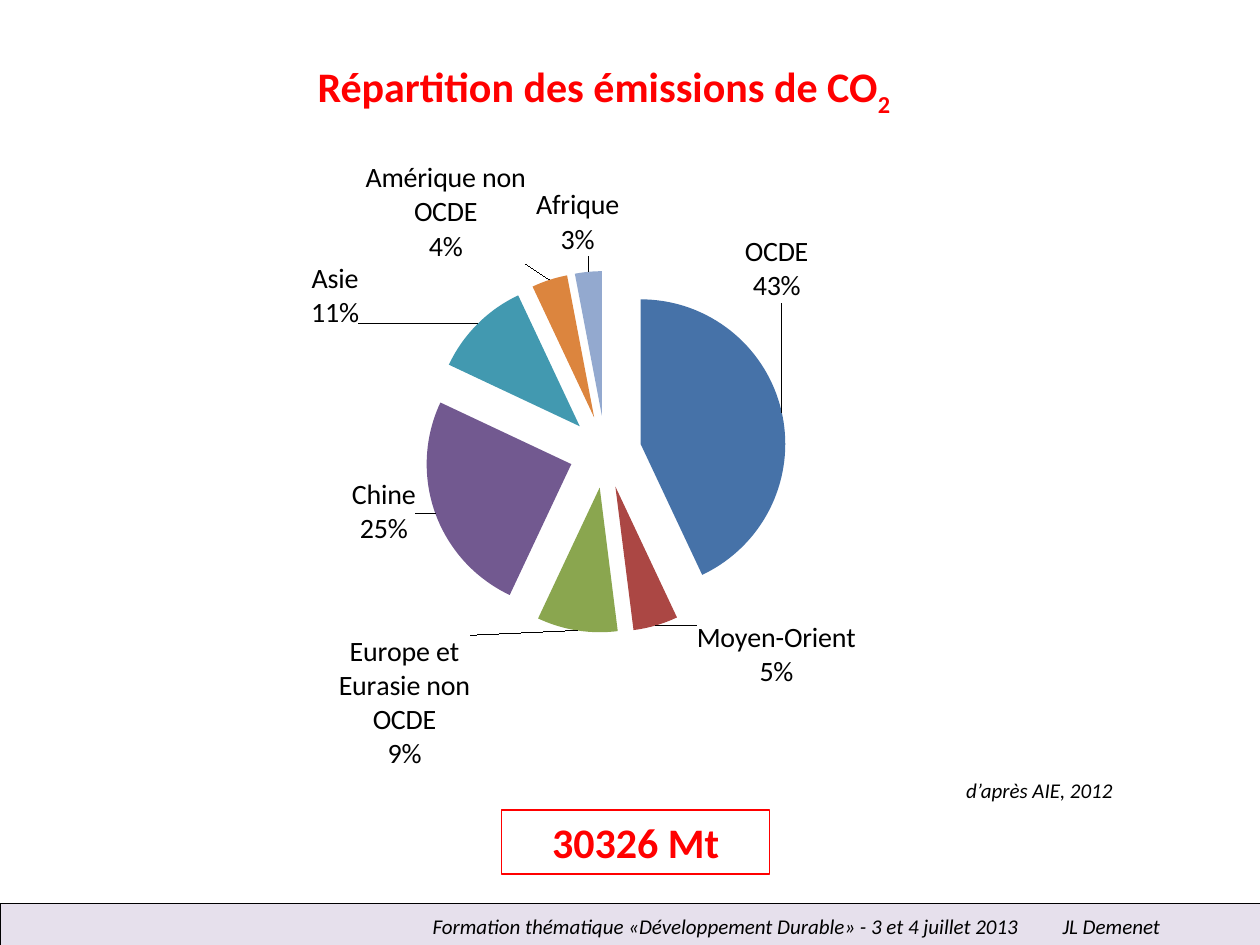
from lxml import etree
from pptx import Presentation, util as u
from pptx.chart.data import CategoryChartData
from pptx.dml.color import RGBColor
from pptx.enum import chart as charts, shapes, text

RED = RGBColor(0xFF, 0x00, 0x00)
BLACK = RGBColor(0x00, 0x00, 0x00)
LAVENDER = RGBColor(0xE6, 0xE0, 0xEC)
FONT = "Calibri"
C = "http://schemas.openxmlformats.org/drawingml/2006/chart"

# Region, share in %, slice colour, label shift in inches from its default place
REGIONS = [
    ("OCDE", 43, RGBColor(0x46, 0x72, 0xA8), (-0.35, -0.85)),
    ("Moyen-Orient", 5, RGBColor(0xAB, 0x47, 0x44), (0.31, -0.09)),
    ("Europe et Eurasie non OCDE", 9, RGBColor(0x8A, 0xA6, 0x4F), (-0.84, -0.02)),
    ("Chine", 25, RGBColor(0x72, 0x59, 0x90), (-0.1, -0.3)),
    ("Asie", 11, RGBColor(0x42, 0x99, 0xB0), (-0.9, 0.09)),
    ("Amérique non OCDE", 4, RGBColor(0xDC, 0x85, 0x3E), (-0.17, -0.07)),
    ("Afrique", 3, RGBColor(0x93, 0xA9, 0xCF), (0.25, -0.06)),
]

presentation = Presentation()
presentation.slide_width, presentation.slide_height = u.Inches(10), u.Inches(7.5)
WIDTH, HEIGHT = presentation.slide_width, presentation.slide_height
slide = presentation.slides.add_slide(presentation.slide_layouts[5])


def share(left, top, width, height):
    """Turn percentages of the slide into a position and a size."""
    return [int(WIDTH * left / 100), int(HEIGHT * top / 100),
            int(WIDTH * width / 100), int(HEIGHT * height / 100)]


def write(shape, words, size, color, align, bold=False, italic=False):
    """Fill the shape with one formatted paragraph."""
    frame = shape.text_frame
    frame.word_wrap = True
    frame.vertical_anchor = text.MSO_ANCHOR.MIDDLE
    paragraph = frame.paragraphs[0]
    paragraph.text = words
    paragraph.alignment = align
    font = paragraph.font
    font.name, font.size, font.color.rgb = FONT, u.Pt(size), color
    font.bold, font.italic = bold, italic
    return paragraph


# Title
title = slide.shapes.title
title.left, title.top, title.width, title.height = share(24.2, 4.8, 49.6, 9.33)
heading = write(title, "Répartition des émissions de CO", 24, RED,
                text.PP_ALIGN.LEFT, bold=True)
subscript = heading.add_run()
subscript.text = "2"
subscript.font._element.set("baseline", "-25000")

# Exploded pie
data = CategoryChartData()
data.categories = [region[0] for region in REGIONS]
data.add_series("Series 1", [region[1] for region in REGIONS])
frame = slide.shapes.add_chart(charts.XL_CHART_TYPE.PIE,
                               *share(11.2, 16.13, 73.7, 67.87), data)
chart = frame.chart
chart.has_legend = chart.has_title = False
chart.font.name, chart.font.size, chart.font.color.rgb = FONT, u.Pt(10), BLACK
plot = chart.plots[0]
plot.vary_by_categories = True
series = plot.series[0]
for index, (_, _, color, _) in enumerate(REGIONS):
    fill = series.points[index].format.fill
    fill.solid()
    fill.fore_color.rgb = color
explosion = etree.Element(f"{{{C}}}explosion", val="25")
series._element.find(f"{{{C}}}dPt").addprevious(explosion)

# Place of the pie inside the chart
area = chart._chartSpace.find(f".//{{{C}}}plotArea")
for old in area.findall(f"{{{C}}}layout"):
    area.remove(old)
area.insert(0, etree.fromstring(
    f'<c:layout xmlns:c="{C}"><c:manualLayout><c:layoutTarget val="inner"/>'
    '<c:xMode val="edge"/><c:yMode val="edge"/><c:x val="0.305"/><c:y val="0.185"/>'
    '<c:w val="0.39"/><c:h val="0.564"/></c:manualLayout></c:layout>'))

# Labels with name and percentage, moved away from the slices
SHOW = ('<c:dLblPos val="outEnd"/><c:showLegendKey val="0"/><c:showVal val="0"/>'
        '<c:showCatName val="1"/><c:showSerName val="0"/><c:showPercent val="1"/>'
        '<c:showBubbleSize val="0"/><c:separator>\n</c:separator>')
STYLE = ('<c:numFmt formatCode="0%" sourceLinked="0"/><c:spPr><a:noFill/></c:spPr>'
         '<c:txPr><a:bodyPr/><a:p><a:pPr><a:defRPr sz="1600">'
         f'<a:solidFill><a:srgbClr val="{BLACK}"/></a:solidFill>'
         f'<a:latin typeface="{FONT}"/></a:defRPr></a:pPr>'
         '<a:endParaRPr lang="fr-FR"/></a:p></c:txPr>')
moved = "".join(
    f'<c:dLbl><c:idx val="{index}"/><c:layout><c:manualLayout>'
    f'<c:x val="{u.Inches(x) / frame.width:.4f}"/>'
    f'<c:y val="{u.Inches(y) / frame.height:.4f}"/>'
    f'</c:manualLayout></c:layout>{STYLE}{SHOW}</c:dLbl>'
    for index, (_, _, _, (x, y)) in enumerate(REGIONS))
labels = etree.fromstring(
    f'<c:dLbls xmlns:c="{C}" xmlns:a="http://schemas.openxmlformats.org/drawingml/2006/main">'
    f'{moved}{STYLE}{SHOW}<c:showLeaderLines val="1"/></c:dLbls>')
series._element.find(f"{{{C}}}cat").addprevious(labels)

# Total, source and footer: place, words, size, colour, bold, fill, line, line width
CENTER, LEFT = text.PP_ALIGN.CENTER, text.PP_ALIGN.LEFT
BOXES = [
    ((39.8, 85.7, 21.3, 6.8), "30326 Mt", 24, RED, CENTER, None, RED, 0.75),
    ((75.7, 81.6, 15, 4), "d’après AIE, 2012", 12, BLACK, LEFT, None, None, 0),
    ((0, 95.6, 100, 4.5), "", 12, BLACK, CENTER, LAVENDER, BLACK, 0.25),
    ((26.6, 96, 73.2, 4),
     "Formation thématique «Développement Durable» - 3 et 4 juillet 2013\tJL Demenet",
     12, BLACK, CENTER, LAVENDER, None, 0),
]
for place, words, size, color, align, background, outline, weight in BOXES:
    box = slide.shapes.add_shape(shapes.MSO_SHAPE.RECTANGLE, *share(*place))
    box.shadow.inherit = False
    if background:
        box.fill.solid()
        box.fill.fore_color.rgb = background
    else:
        box.fill.background()
    if outline:
        box.line.color.rgb, box.line.width = outline, u.Pt(weight)
    else:
        box.line.fill.background()
    if words:
        write(box, words, size, color, align, bold=color == RED, italic=color == BLACK)

presentation.save("out.pptx")
